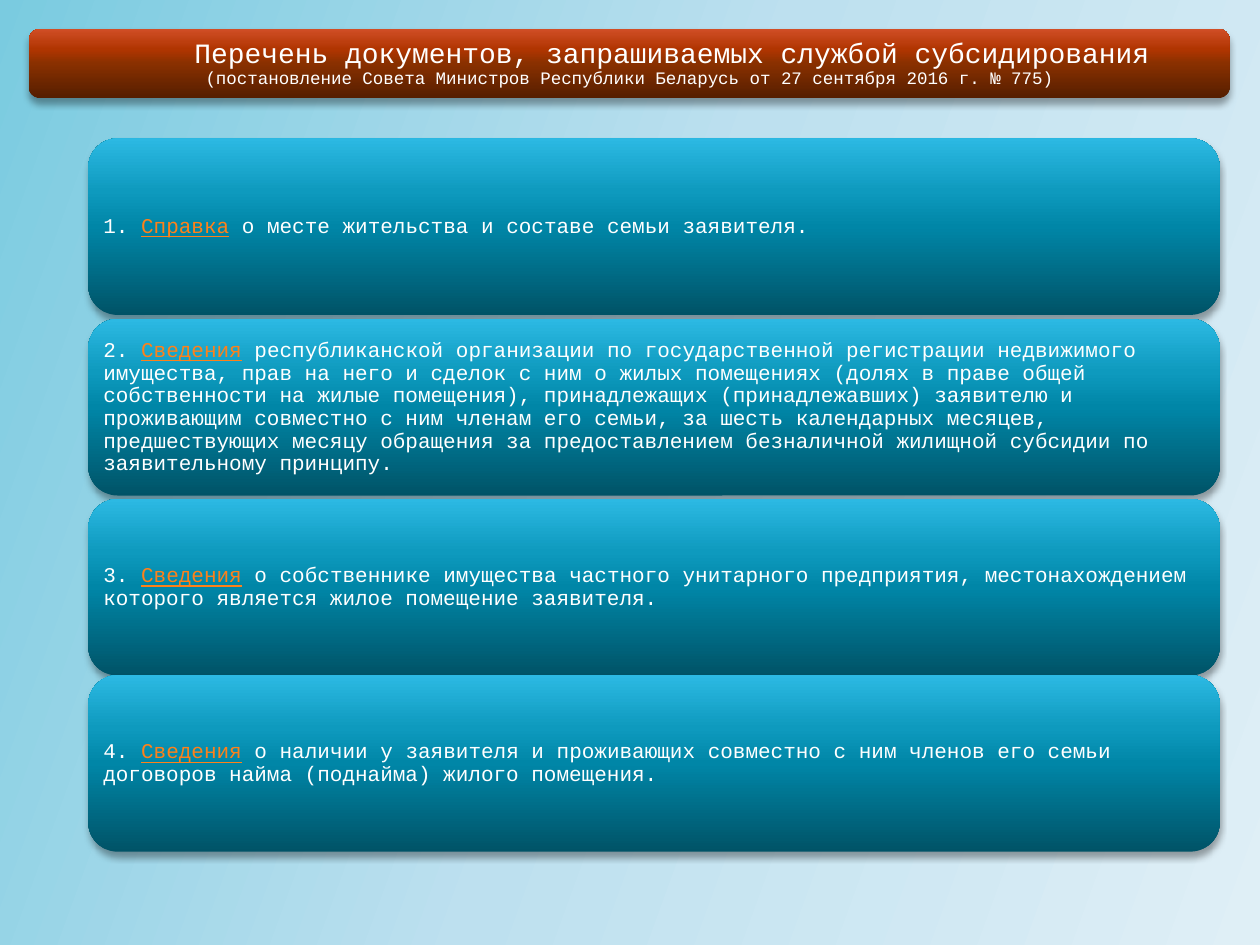
import pptx
import pptx.util
import pptx.dml.color
import pptx.enum.shapes
import pptx.enum.text
import pptx.oxml
import pptx.oxml.ns

Cm, Pt = pptx.util.Cm, pptx.util.Pt
qn = pptx.oxml.ns.qn

# Content
title = (
    "Перечень документов, запрашиваемых службой субсидирования",
    "(постановление Совета Министров Республики Беларусь от 27 сентября 2016 г. № 775)",
)
# Top in cm, linked word, rest of the sentence
items = [
    (2.79, "Справка", "о месте жительства и составе семьи заявителя."),
    (6.43, "Сведения",
     "республиканской организации по государственной регистрации недвижимого имущества, "
     "прав на него и сделок с ним о жилых помещениях (долях в праве общей собственности "
     "на жилые помещения), принадлежащих (принадлежавших) заявителю и проживающим "
     "совместно с ним членам его семьи, за шесть календарных месяцев, предшествующих "
     "месяцу обращения за предоставлением безналичной жилищной субсидии по "
     "заявительному принципу."),
    (10.06, "Сведения",
     "о собственнике имущества частного унитарного предприятия, местонахождением "
     "которого является жилое помещение заявителя."),
    (13.61, "Сведения",
     "о наличии у заявителя и проживающих совместно с ним членов его семьи договоров "
     "найма (поднайма) жилого помещения."),
]

theme = {
    "font": "Courier New",
    "text": "FFFFFF",
    "link": "FF8119",
    "head": 16, "sub": 10, "body": 12,
    "back": [(0, "7ACBE0"), (50, "BDE0EF"), (100, "DFEFF6")],
    "red": [(0, "551E00"), (50, "893000"), (70, "B03501"), (100, "D14E26")],
    "blue": [(0, "005367"), (50, "0086A7"), (70, "0E9ABE"), (100, "2CB9E3")],
}


def shade(owner, fill, stops, angle):
    """Fill with a linear gradient, its angle counted clockwise."""
    fill.gradient()
    grad = owner._element.find(".//" + qn("a:gradFill"))
    marks = "".join(
        f'<a:gs pos="{pos * 1000}"><a:srgbClr val="{tint}"/></a:gs>' for pos, tint in stops)
    space = pptx.oxml.ns.nsdecls("a")
    grad.replace(grad.find(qn("a:gsLst")),
                 pptx.oxml.parse_xml(f"<a:gsLst {space}>{marks}</a:gsLst>"))
    grad.find(qn("a:lin")).set("ang", str(angle * 60000))


def add_panel(slide, box, stops, inset):
    """Add a rounded panel with a soft shadow; return its text frame."""
    panel = slide.shapes.add_shape(
        pptx.enum.shapes.MSO_SHAPE.ROUNDED_RECTANGLE, *map(Cm, box))
    shade(panel, panel.fill, stops, 270)
    panel.line.fill.background()
    panel.shadow.inherit = False
    panel._element.spPr.find(qn("a:effectLst")).append(pptx.oxml.parse_xml(
        f'<a:outerShdw {pptx.oxml.ns.nsdecls("a")} blurRad="{Pt(4)}" dist="{Pt(3)}" '
        'dir="5400000" rotWithShape="0"><a:srgbClr val="000000">'
        '<a:alpha val="35000"/></a:srgbClr></a:outerShdw>'))
    frame = panel.text_frame
    frame.word_wrap = True
    frame.vertical_anchor = pptx.enum.text.MSO_ANCHOR.MIDDLE
    frame.margin_left = frame.margin_right = Cm(inset)
    frame.margin_top = frame.margin_bottom = Cm(inset)
    return frame


def add_run(para, text, size, tint=theme["text"], under=False):
    run = para.add_run()
    run.text = text
    run.font.name = theme["font"]
    run.font.size = Pt(size)
    run.font.underline = under
    run.font.color.rgb = pptx.dml.color.RGBColor.from_string(tint)


def set_para(para, align):
    para.alignment = align
    para.line_spacing = 0.9


def main():
    deck = pptx.Presentation()
    deck.slide_width, deck.slide_height = Cm(25.4), Cm(19.05)
    slide = deck.slides.add_slide(deck.slide_layouts[6])
    shade(slide, slide.background.fill, theme["back"], 20)
    align = pptx.enum.text.PP_ALIGN

    # Title bar, its first line shifted right
    frame = add_panel(slide, (0.58, 0.58, 24.21, 1.4), theme["red"], 0.1)
    head, sub = frame.paragraphs[0], frame.add_paragraph()
    for para, text, size in zip((head, sub), title, (theme["head"], theme["sub"])):
        set_para(para, align.CENTER)
        add_run(para, text, size)
    head._p.get_or_add_pPr().set("marL", str(Cm(1.73)))

    # Numbered cards
    for num, (top, link, rest) in enumerate(items, 1):
        frame = add_panel(slide, (1.78, top, 22.81, 3.56), theme["blue"], 0.13)
        para = frame.paragraphs[0]
        set_para(para, align.LEFT)
        add_run(para, f"{num}. ", theme["body"])
        add_run(para, link, theme["body"], theme["link"], True)
        add_run(para, " " + rest, theme["body"])

    deck.save("out.pptx")


if __name__ == "__main__":
    main()
